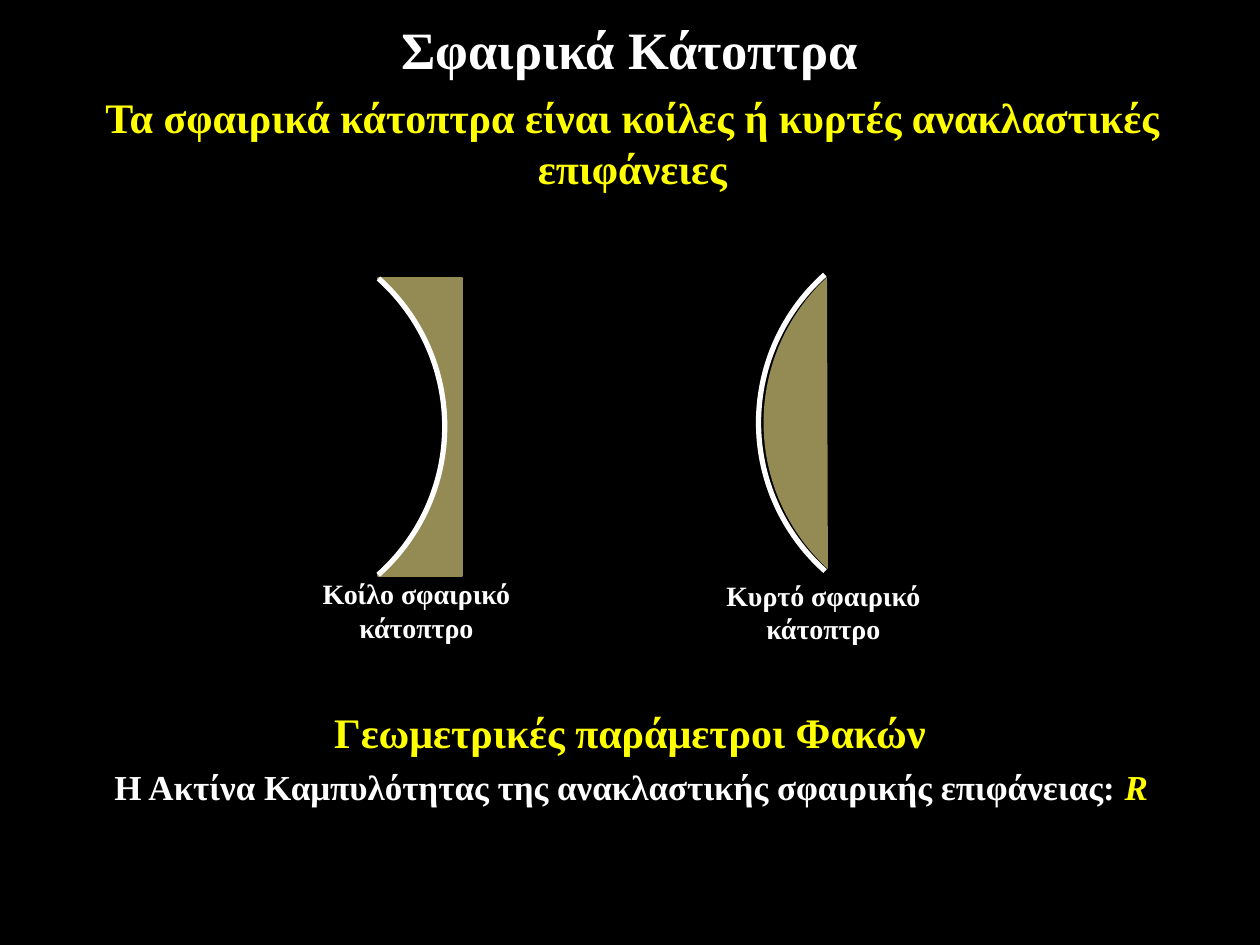
from pptx import Presentation
from pptx.dml.color import RGBColor
from pptx.enum.shapes import MSO_SHAPE as Shape
from pptx.enum.text import MSO_ANCHOR as Anchor, PP_ALIGN as Align
from pptx.util import Inches, Pt

BLACK = RGBColor(0x00, 0x00, 0x00)
WHITE = RGBColor(0xFF, 0xFF, 0xFF)
YELLOW = RGBColor(0xFF, 0xFF, 0x00)
OLIVE = RGBColor(0x94, 0x8A, 0x54)

deck = Presentation()
deck.slide_width, deck.slide_height = Inches(10), Inches(7.5)
W, H = deck.slide_width, deck.slide_height
slide = deck.slides.add_slide(deck.slide_layouts[5])
slide.background.fill.solid()
slide.background.fill.fore_color.rgb = BLACK


def write(text, box=None, at=None, size=24, color=YELLOW, anchor=Anchor.TOP, tail=""):
    """Put bold centred text in a box; the tail is yellow italic."""
    if box is None:
        box = slide.shapes.add_textbox(*at)
    else:
        box.left, box.top, box.width, box.height = at
    frame = box.text_frame
    frame.word_wrap = True
    frame.vertical_anchor = anchor
    line = frame.paragraphs[0]
    line.alignment = Align.CENTER
    for part, tint, slant in ((text, color, False), (tail, YELLOW, True)):
        if part:
            run = line.add_run()
            run.text = part
            font = run.font
            font.name, font.size, font.bold = "Times New Roman", Pt(size), True
            font.italic = slant
            font.color.rgb = tint


def draw(kind, at, fill, line=None, width=0, angles=()):
    """Draw a filled shape; angles are in degrees, clockwise from the right."""
    shape = slide.shapes.add_shape(kind, *at)
    shape.shadow.inherit = False
    shape.fill.solid()
    shape.fill.fore_color.rgb = fill
    if line is None:
        shape.line.fill.background()
    else:
        shape.line.color.rgb = line
        shape.line.width = Pt(width)
    for i, angle in enumerate(angles):
        shape.adjustments[i] = angle * 0.6  # 60000 units a degree, over 100000
    return shape


# Headings and closing lines
write("Σφαιρικά Κάτοπτρα", box=slide.shapes.title, at=(0, Inches(0.05), W, Inches(0.67)),
      size=30, color=WHITE, anchor=Anchor.MIDDLE)
wide = Inches(9.96)
write("Τα σφαιρικά κάτοπτρα είναι κοίλες ή κυρτές ανακλαστικές επιφάνειες",
      at=(Inches(0.04), Inches(0.68), wide, Inches(0.87)))
write("Γεωμετρικές παράμετροι Φακών",
      at=(Inches(0.02), Inches(5.56), wide, Inches(0.55)))
write("Η Ακτίνα Καμπυλότητας της ανακλαστικής σφαιρικής επιφάνειας: ",
      at=(Inches(0.03), Inches(6.03), wide, Inches(0.55)), size=20, color=WHITE, tail="R")

# Mirrors: both are cut from circles of one size
ball = Inches(3.15)
bow = (311.76, 48.36)

# Concave mirror: the arc's black sector hollows out the block
draw(Shape.RECTANGLE, (Inches(3.01), Inches(2.21), Inches(0.65), Inches(2.36)),
     OLIVE, line=OLIVE, width=2)
draw(Shape.ARC, (Inches(0.38), Inches(1.81), ball, ball), BLACK, WHITE, 3, bow)

# Convex mirror: the arc is turned to face left
arc = draw(Shape.ARC, (Inches(6.02), Inches(1.78), ball, ball), BLACK, WHITE, 3, bow)
arc._element.spPr.xfrm.set("flipH", "1")
draw(Shape.CHORD, (Inches(6.06), Inches(1.78), ball, ball), OLIVE, angles=(132.51, 227.14))

# Mirror labels
for name, left, top in (("Κοίλο", 2.4, 4.53), ("Κυρτό", 5.63, 4.54)):
    write(f"{name} σφαιρικό κάτοπτρο", size=16, color=WHITE,
          at=(Inches(left), Inches(top), Inches(1.81), Inches(0.64)))

deck.save("out.pptx")
